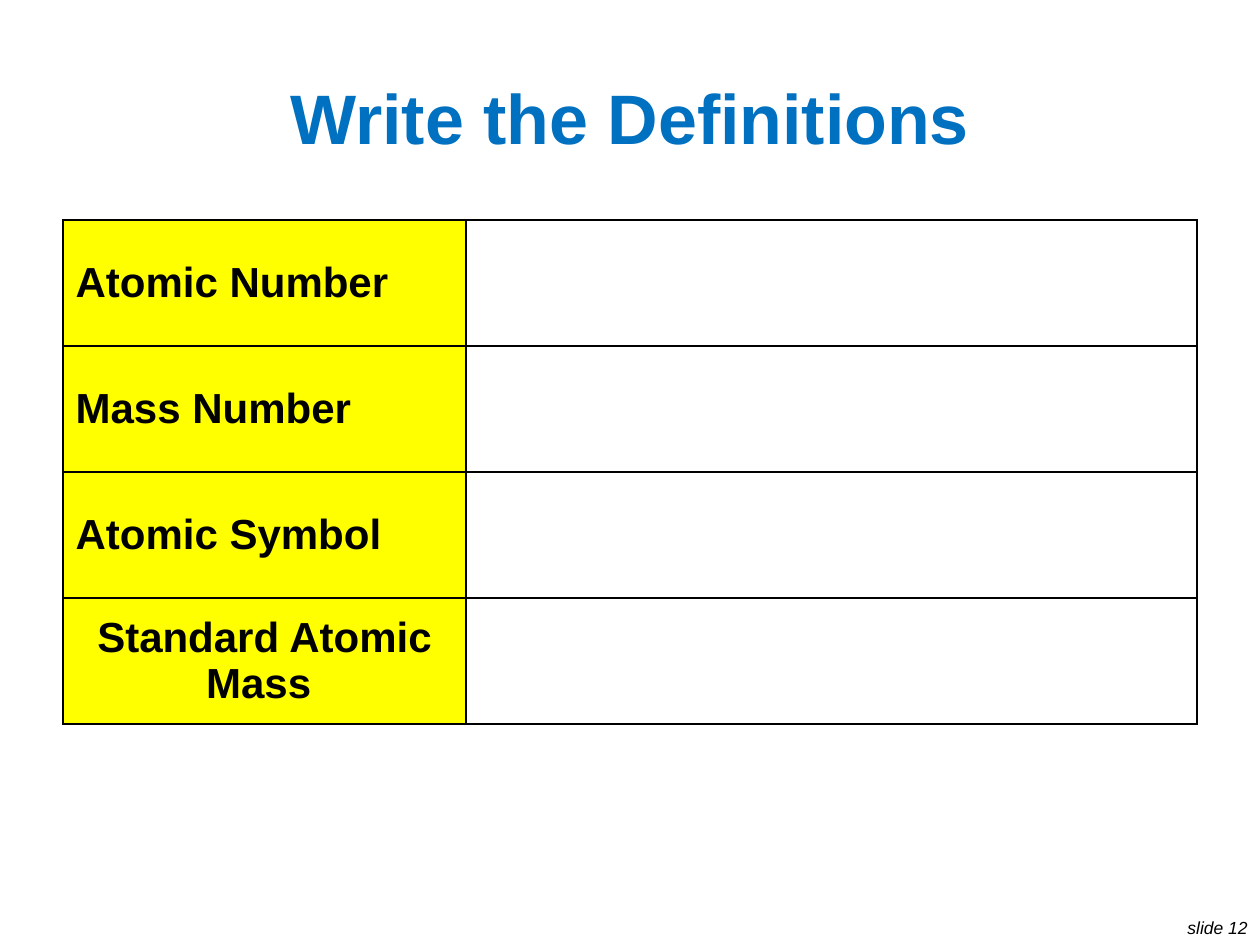
from lxml import etree
from pptx import Presentation
from pptx.dml.color import RGBColor
from pptx.enum.text import MSO_ANCHOR, PP_ALIGN
from pptx.oxml.ns import qn
from pptx.util import Pt

PX = 914400 // 126
LEFT, CENTER, RIGHT = PP_ALIGN.LEFT, PP_ALIGN.CENTER, PP_ALIGN.RIGHT
TOP, MIDDLE = MSO_ANCHOR.TOP, MSO_ANCHOR.MIDDLE
BLACK, BLUE, YELLOW = "000000", "0070C0", "FFFF00"
TERMS = [
    ("Atomic Number", LEFT),
    ("Mass Number", LEFT),
    ("Atomic Symbol", LEFT),
    ("Standard Atomic Mass ", CENTER),
]


def color(code):
    return RGBColor.from_string(code)


class Deck:
    font = "Arial"
    ink = BLACK
    rule = 1

    def __init__(self, wide, high):
        self.prs = Presentation()
        self.prs.slide_width, self.prs.slide_height = wide * PX, high * PX
        self.slide = self.prs.slides.add_slide(self.prs.slide_layouts[6])

    def words(self, frame, text, size, align=LEFT, ink=None, **style):
        """Fill a text frame with one styled run."""
        par = frame.paragraphs[0]
        par.alignment = align
        run = par.add_run()
        run.text = text
        form = {"name": self.font, "size": Pt(size), **style}
        for key, value in form.items():
            setattr(run.font, key, value)
        run.font.color.rgb = color(ink or self.ink)

    def label(self, box, text, size, anchor=TOP, wrap=True, **style):
        shape = self.slide.shapes.add_textbox(*(n * PX for n in box))
        frame = shape.text_frame
        frame.word_wrap = wrap
        frame.vertical_anchor = anchor
        self.words(frame, text, size, **style)

    def border(self, cell):
        props = cell._tc.get_or_add_tcPr()
        for spot, side in enumerate(("a:lnL", "a:lnR", "a:lnT", "a:lnB")):
            line = etree.Element(qn(side), w=str(Pt(self.rule)))
            fill = etree.SubElement(line, qn("a:solidFill"))
            etree.SubElement(fill, qn("a:srgbClr"), val=self.ink)
            props.insert(spot, line)

    def table(self, left, top, widths, high, terms, size):
        """Put each term in a yellow cell beside an empty one."""
        box = (left, top, sum(widths), high * len(terms))
        grid = self.slide.shapes.add_table(
            len(terms), len(widths), *(n * PX for n in box)).table
        grid.first_row = grid.horz_banding = False
        for col, wide in zip(grid.columns, widths):
            col.width = wide * PX
        for row, (term, align) in enumerate(terms):
            grid.rows[row].height = high * PX
            name, blank = grid.cell(row, 0), grid.cell(row, 1)
            name.fill.solid()
            name.fill.fore_color.rgb = color(YELLOW)
            name.vertical_anchor = MIDDLE
            self.words(name.text_frame, term, size, align, bold=True)
            blank.fill.background()
            for cell in (name, blank):
                self.border(cell)


def main():
    deck = Deck(1260, 945)
    deck.label((1172, 911, 88, 34), "slide 12", 10, wrap=False,
               align=RIGHT, italic=True)
    deck.label((63, 38, 1134, 157), "Write the Definitions", 40, MIDDLE,
               align=CENTER, ink=BLUE, bold=True)
    deck.table(63, 220, (403, 731), 126, TERMS, 24)
    deck.prs.save("out.pptx")


if __name__ == "__main__":
    main()
